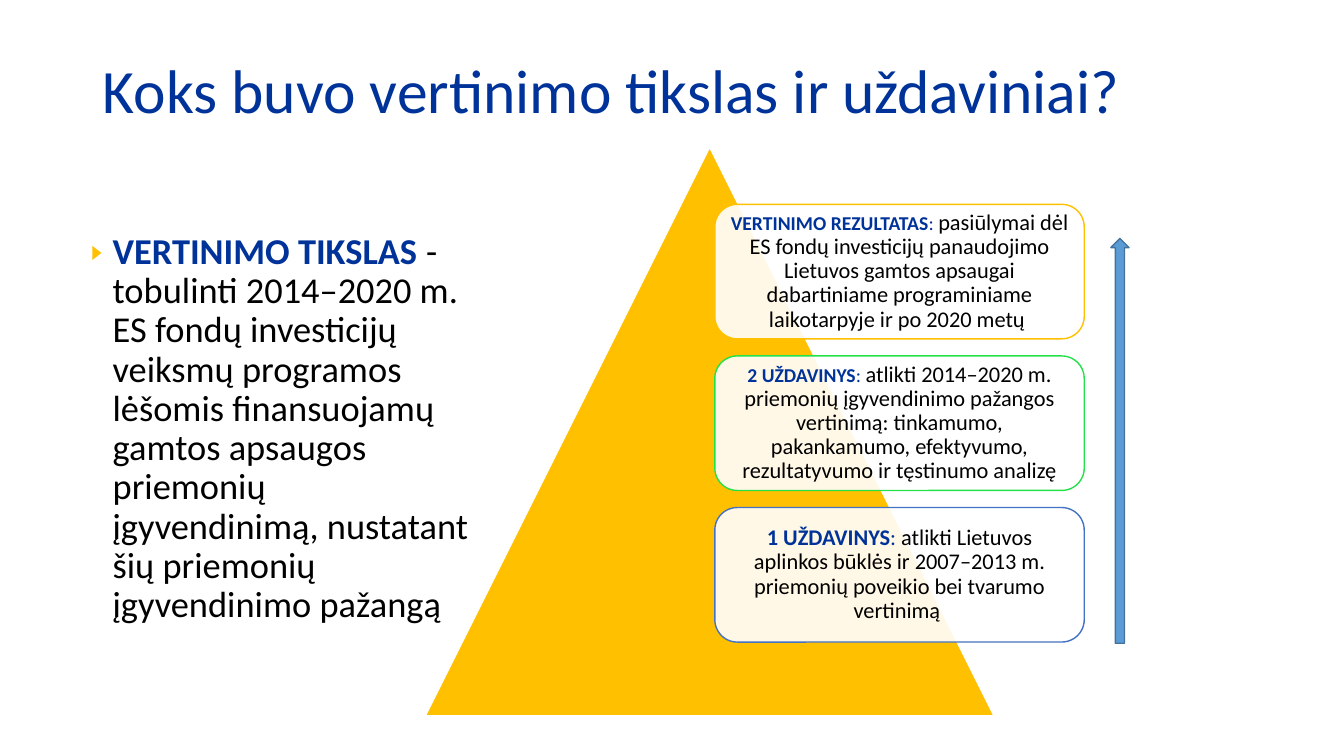
from dataclasses import dataclass

from lxml import etree
from pptx import Presentation
from pptx.dml.color import RGBColor
from pptx.enum.shapes import MSO_SHAPE
from pptx.enum.text import MSO_ANCHOR, MSO_AUTO_SIZE, PP_ALIGN
from pptx.oxml.ns import qn
from pptx.util import Cm, Pt

TRIANGLE = MSO_SHAPE.ISOSCELES_TRIANGLE
ROUNDED = MSO_SHAPE.ROUNDED_RECTANGLE
UP_ARROW = MSO_SHAPE.UP_ARROW
MIDDLE = MSO_ANCHOR.MIDDLE
CENTER = PP_ALIGN.CENTER
GROW = MSO_AUTO_SIZE.SHAPE_TO_FIT_TEXT


@dataclass(frozen=True)
class Theme:
    """Colours and type sizes of the slide."""
    font: str = "Calibri"
    navy: str = "003399"
    black: str = "000000"
    white: str = "FFFFFF"
    gold: str = "FFC000"
    green: str = "23E148"
    blue: str = "4472C4"
    arrow_fill: str = "5B9BD5"
    arrow_line: str = "43739E"
    title_size: int = 44
    purpose_size: int = 26
    card_size: int = 16
    label_size: int = 14


THEME = Theme()

CARDS = [
    ("VERTINIMO REZULTATAS", THEME.label_size, THEME.gold,
     "pasiūlymai dėl ES fondų investicijų panaudojimo Lietuvos gamtos apsaugai "
     "dabartiniame programiniame laikotarpyje ir po 2020 metų "),
    ("2 UŽDAVINYS", THEME.label_size, THEME.green,
     "atlikti 2014–2020 m. priemonių įgyvendinimo pažangos vertinimą: tinkamumo, "
     "pakankamumo, efektyvumo, rezultatyvumo ir tęstinumo analizę"),
    ("1 UŽDAVINYS", THEME.card_size, THEME.blue,
     "atlikti Lietuvos aplinkos būklės ir 2007–2013 m. priemonių poveikio bei "
     "tvarumo vertinimą "),
]


def add_figure(slide, kind, box, fill, line=None):
    """Add a preset shape with flat fill and an optional outline."""
    figure = slide.shapes.add_shape(kind, *map(Cm, box))
    figure.shadow.inherit = False
    figure.fill.solid()
    figure.fill.fore_color.rgb = RGBColor.from_string(fill)
    if line:
        figure.line.color.rgb = RGBColor.from_string(line)
        figure.line.width = Pt(1)
    else:
        figure.line.fill.background()
    return figure


def write_paragraph(frame, pieces):
    """Fill the frame with one paragraph of (text, size, colour, bold) pieces."""
    frame.word_wrap = True
    paragraph = frame.paragraphs[0]
    paragraph.line_spacing = 0.9
    paragraph.font.name = THEME.font
    for text, size, colour, bold in pieces:
        run = paragraph.add_run()
        run.text = text
        run.font.size = Pt(size)
        run.font.bold = bold
        run.font.color.rgb = RGBColor.from_string(colour)
    return paragraph


def add_title(slide, box):
    """Place the slide title, centred vertically in its box."""
    frame = slide.shapes.add_textbox(*map(Cm, box)).text_frame
    frame.vertical_anchor = MIDDLE
    write_paragraph(frame, [("Koks buvo vertinimo tikslas ir uždaviniai?",
                             THEME.title_size, THEME.navy, False)])


def add_card(slide, box, label, label_size, outline, task):
    """Place one translucent card with a bold label and its task."""
    card = add_figure(slide, ROUNDED, box, THEME.white, outline)
    colour = card.fill._xPr.find(qn("a:solidFill"))[0]
    etree.SubElement(colour, qn("a:alpha"), val="90000")
    frame = card.text_frame
    frame.vertical_anchor = MIDDLE
    frame.margin_left = frame.margin_right = Cm(0.16)
    frame.margin_top = frame.margin_bottom = Cm(0.16)
    paragraph = write_paragraph(frame, [
        (label, label_size, THEME.navy, True),
        (": ", label_size, THEME.navy, False),
        (task, THEME.card_size, THEME.black, False),
    ])
    paragraph.alignment = CENTER


def add_pyramid(slide, box):
    """Place the pyramid, its column of cards and the upward arrow."""
    left, top, side, _ = box
    add_figure(slide, TRIANGLE, box, THEME.gold, THEME.white)
    card_left, card_top = left + side / 2 + 0.13, top + 1.44
    card_width, card_height, pitch = 9.31, 3.39, 3.82
    for index, card in enumerate(CARDS):
        card_box = (card_left, card_top + index * pitch, card_width, card_height)
        add_card(slide, card_box, *card)
    arrow_box = (card_left + card_width + 0.67, card_top + 0.86, 0.46, 10.2)
    add_figure(slide, UP_ARROW, arrow_box, THEME.arrow_fill, THEME.arrow_line)


def add_purpose(slide, box):
    """Place the purpose text with its triangular marker."""
    left, top, _, _ = box
    frame = slide.shapes.add_textbox(*map(Cm, box)).text_frame
    frame.auto_size = GROW
    write_paragraph(frame, [
        ("VERTINIMO TIKSLAS ", THEME.purpose_size, THEME.navy, True),
        ("- tobulinti 2014–2020 m. ES fondų investicijų veiksmų programos lėšomis "
         "finansuojamų gamtos apsaugos priemonių įgyvendinimą, nustatant šių "
         "priemonių įgyvendinimo pažangą", THEME.purpose_size, THEME.black, False),
    ])
    marker = add_figure(slide, TRIANGLE, (left - 0.33, top + 0.52, 0.36, 0.23),
                        THEME.gold)
    marker.rotation = 90


def main():
    """Build and save the slide."""
    deck = Presentation()
    deck.slide_width, deck.slide_height = Cm(33.87), Cm(19.05)
    slide = deck.slides.add_slide(deck.slide_layouts[6])
    add_title(slide, (2.34, 1.02, 29.21, 2.69))
    add_pyramid(slide, (10.72, 3.71, 14.33, 14.33))
    add_purpose(slide, (2.59, 5.74, 9.53, 10.26))
    deck.save("out.pptx")


if __name__ == "__main__":
    main()
